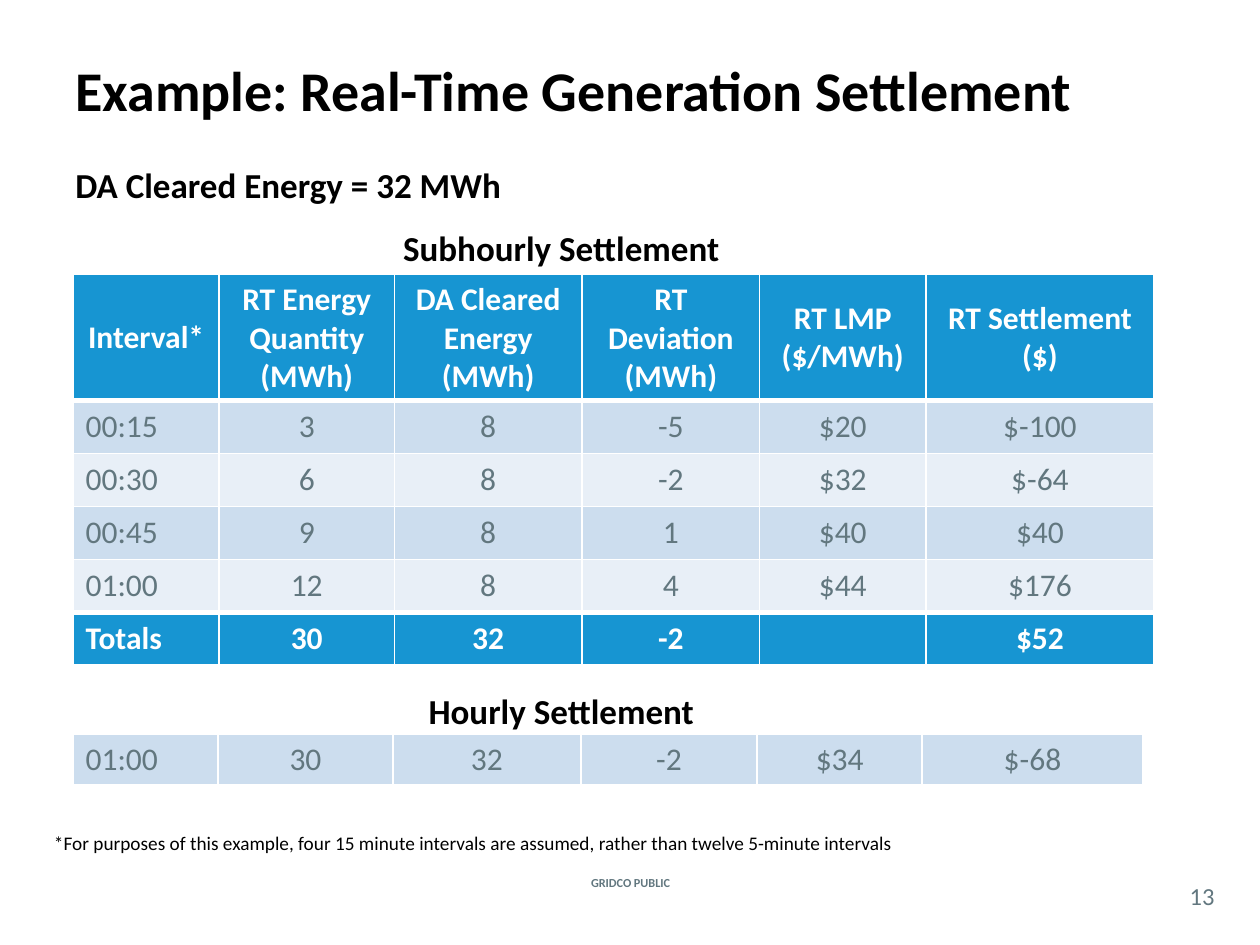
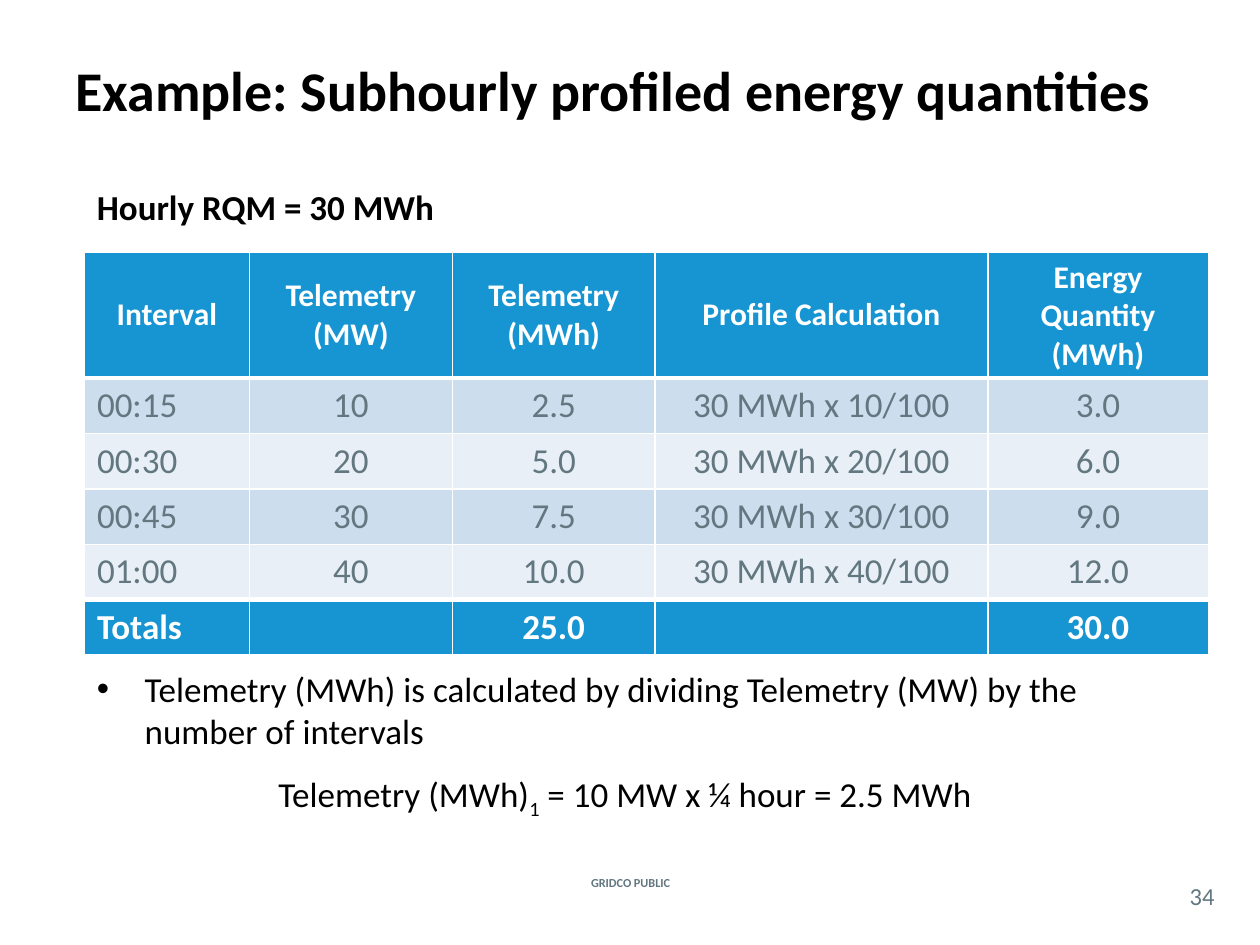
from lxml import etree
from pptx import Presentation
from pptx.dml.color import RGBColor
from pptx.enum.text import MSO_ANCHOR as Anchor, PP_ALIGN as Align
from pptx.oxml.ns import qn
from pptx.util import Inches, Pt

FONT = "Calibri"
BLACK = RGBColor(0x00, 0x00, 0x00)
WHITE = RGBColor(0xFF, 0xFF, 0xFF)
SLATE = RGBColor(0x62, 0x77, 0x7F)
BLUE = RGBColor(0x17, 0x95, 0xD2)
BANDS = [RGBColor(0xCC, 0xDD, 0xEE), RGBColor(0xE8, 0xEF, 0xF7)]
THIN, THICK = 1, 3
FOOTER = "GRIDCO PUBLIC"

# In table text, "\n" starts a paragraph and "\v" breaks a line.
SETTLEMENT = {
    "at": (0.58, 2.18),
    "columns": [1.16, 1.39, 1.49, 1.41, 1.32, 1.81],
    "header": ["Interval*", "RT Energy Quantity\v(MWh)", "DA Cleared Energy (MWh)",
               "RT Deviation (MWh)", "RT LMP ($/MWh)", "RT Settlement ($)"],
    "body": [
        ["00:15", "3", "8", "-5", "$20", "$-100"],
        ["00:30", "6", "8", "-2", "$32", "$-64"],
        ["00:45", "9", "8", "1", "$40", "$40"],
        ["01:00", "12", "8", "4", "$44", "$176"],
    ],
    "totals": ["Totals", "30", "32", "-2", "", "$52"],
    "row_height": 0.42,
    "size": 18,
}
HOURLY = {
    "at": (0.58, 5.83),
    "columns": [1.15, 1.39, 1.49, 1.4, 1.31, 1.75],
    "body": [["01:00", "30", "32", "-2", "$34", "$-68"]],
    "row_height": 0.4,
    "size": 18,
}
PROFILE = {
    "at": (0.67, 2),
    "columns": [1.31, 1.61, 1.61, 2.64, 1.75],
    "header": ["Interval", "Telemetry\n(MW)", "Telemetry\n(MWh)",
               "Profile Calculation", "Energy Quantity\v(MWh)"],
    "body": [
        ["00:15", "10", "2.5", "30 MWh x 10/100", "3.0"],
        ["00:30", "20", "5.0", "30 MWh x 20/100", "6.0"],
        ["00:45", "30", "7.5", "30 MWh x 30/100", "9.0"],
        ["01:00", "40", "10.0", "30 MWh x 40/100", "12.0"],
    ],
    "totals": ["Totals", "", "25.0", "", "30.0"],
    "row_height": 0.44,
    "size": 20,
}
HEADER_HEIGHT = 1
HEADER_SIZE = 18

SLIDES = [
    {
        "title": "Example: Real-Time Generation Settlement",
        "number": "13",
        "headings": [
            ("DA Cleared Energy = 32 MWh", (0.5, 1.25, 8.92, 0.58), Align.LEFT),
            ("Subhourly Settlement", (0.58, 1.75, 7.75, 0.5), Align.CENTER),
            ("Hourly Settlement", (0.58, 5.42, 7.75, 0.58), Align.CENTER),
        ],
        "tables": [SETTLEMENT, HOURLY],
    },
    {
        "title": "Example: Subhourly profiled energy quantities",
        "number": "34",
        "headings": [("Hourly RQM = 30 MWh", (0.67, 1.42, 8.92, 0.58), Align.LEFT)],
        "tables": [PROFILE],
    },
]
FOOTNOTE = ("*For purposes of this example, four 15 minute intervals are assumed, "
            "rather than twelve 5-minute intervals")
BULLET = ("Telemetry (MWh) is calculated by dividing Telemetry (MW) by the number "
          "of intervals")
EQUATION = [("Telemetry (MWh)", False), ("1", True), (" = 10 MW x ¼ hour = 2.5 MWh", False)]


def add_run(paragraph, text, size, color=BLACK, bold=False):
    run = paragraph.add_run()
    run.text = text
    run.font.name = FONT
    run.font.size = Pt(size)
    run.font.bold = bold
    run.font.color.rgb = color
    return run


def add_text(slide, text, at, size, color=BLACK, bold=False, align=Align.LEFT,
             anchor=Anchor.TOP):
    """Add a wrapped text box with one run and return its text frame."""
    frame = slide.shapes.add_textbox(*map(Inches, at)).text_frame
    frame.word_wrap = True
    frame.vertical_anchor = anchor
    paragraph = frame.paragraphs[0]
    paragraph.alignment = align
    add_run(paragraph, text, size, color, bold)
    return frame


def clear_margins(box):
    box.margin_left = box.margin_right = box.margin_top = box.margin_bottom = 0


def set_borders(cell, top, bottom):
    properties = cell._tc.get_or_add_tcPr()
    for side, width in (("L", THIN), ("R", THIN), ("T", top), ("B", bottom)):
        line = etree.SubElement(properties, qn(f"a:ln{side}"), w=str(Pt(width)))
        fill = etree.SubElement(line, qn("a:solidFill"))
        etree.SubElement(fill, qn("a:srgbClr"), val=str(WHITE))


def fill_cell(cell, text, size, color, bold, align):
    cell.vertical_anchor = Anchor.MIDDLE
    frame = cell.text_frame
    for index, part in enumerate(text.split("\n")):
        paragraph = frame.add_paragraph() if index else frame.paragraphs[0]
        paragraph.alignment = align
        for line_index, line in enumerate(part.split("\v")):
            if line_index:
                paragraph.add_line_break()
            if line:
                add_run(paragraph, line, size, color, bold)


def add_data_table(slide, data):
    header = [data["header"]] if "header" in data else []
    totals = [data["totals"]] if "totals" in data else []
    rows = header + data["body"] + totals
    heights = [HEADER_HEIGHT] * len(header)
    heights += [data["row_height"]] * (len(rows) - len(header))
    size = (sum(data["columns"]), sum(heights))
    table = slide.shapes.add_table(len(rows), len(data["columns"]),
                                   *map(Inches, data["at"] + size)).table
    table.horz_banding = False
    for column, width in zip(table.columns, data["columns"]):
        column.width = Inches(width)

    # Row edges below the header and above the totals are thick.
    edges = [THIN] * (len(rows) + 1)
    if header:
        edges[1] = THICK
    if totals:
        edges[-2] = THICK

    for r, values in enumerate(rows):
        table.rows[r].height = Inches(heights[r])
        is_header = values in header
        strong = is_header or values in totals
        for c, text in enumerate(values):
            cell = table.cell(r, c)
            set_borders(cell, edges[r], edges[r + 1])
            cell.fill.solid()
            cell.fill.fore_color.rgb = BLUE if strong else BANDS[(r - len(header)) % 2]
            if c and not is_header:
                clear_margins(cell)
            fill_cell(cell, text, HEADER_SIZE if is_header else data["size"],
                      WHITE if strong else SLATE, strong,
                      Align.CENTER if c or is_header else Align.LEFT)


def set_indent(paragraph, left, first=0):
    properties = paragraph._p.get_or_add_pPr()
    properties.set("marL", str(Inches(left)))
    properties.set("indent", str(Inches(first)))
    return properties


def add_explanation(slide):
    """Add the bullet and the worked equation under the profile table."""
    frame = add_text(slide, BULLET, (0.67, 5.25, 8.92, 1.42), 20)
    properties = set_indent(frame.paragraphs[0], 0.38, -0.38)
    etree.SubElement(properties, qn("a:buFont"), typeface="Arial")
    etree.SubElement(properties, qn("a:buChar"), char="•")
    equation = frame.add_paragraph()
    set_indent(equation, 1.44)
    equation.space_before = Pt(12)
    for text, subscript in EQUATION:
        run = add_run(equation, text, 20)
        if subscript:
            run._r.get_or_add_rPr().set("baseline", "-25000")


def add_base_slide(presentation, content):
    """Add a slide with its title, footer, number, headings and tables."""
    slide = presentation.slides.add_slide(presentation.slide_layouts[6])
    add_text(slide, FOOTER, (4.27, 6.92, 1.47, 0.17), 7, SLATE, True,
             Align.CENTER, Anchor.MIDDLE)
    number = add_text(slide, content["number"], (9.33, 6.96, 0.42, 0.29), 14, SLATE,
                      align=Align.CENTER, anchor=Anchor.MIDDLE)
    clear_margins(number)
    add_text(slide, content["title"], (0.5, 0.08, 9, 1.25), 32, bold=True,
             anchor=Anchor.MIDDLE)
    for text, at, align in content["headings"]:
        add_text(slide, text, at, 20, bold=True, align=align)
    for data in content["tables"]:
        add_data_table(slide, data)
    return slide


def main():
    presentation = Presentation()
    presentation.slide_width = Inches(10)
    presentation.slide_height = Inches(7.5)
    settlement, profile = [add_base_slide(presentation, content) for content in SLIDES]
    footnote = add_text(settlement, FOOTNOTE, (0.33, 6.58, 8.92, 0.25), 11)
    footnote.paragraphs[0].line_spacing = 0.8
    add_explanation(profile)
    presentation.save("out.pptx")


if __name__ == "__main__":
    main()
